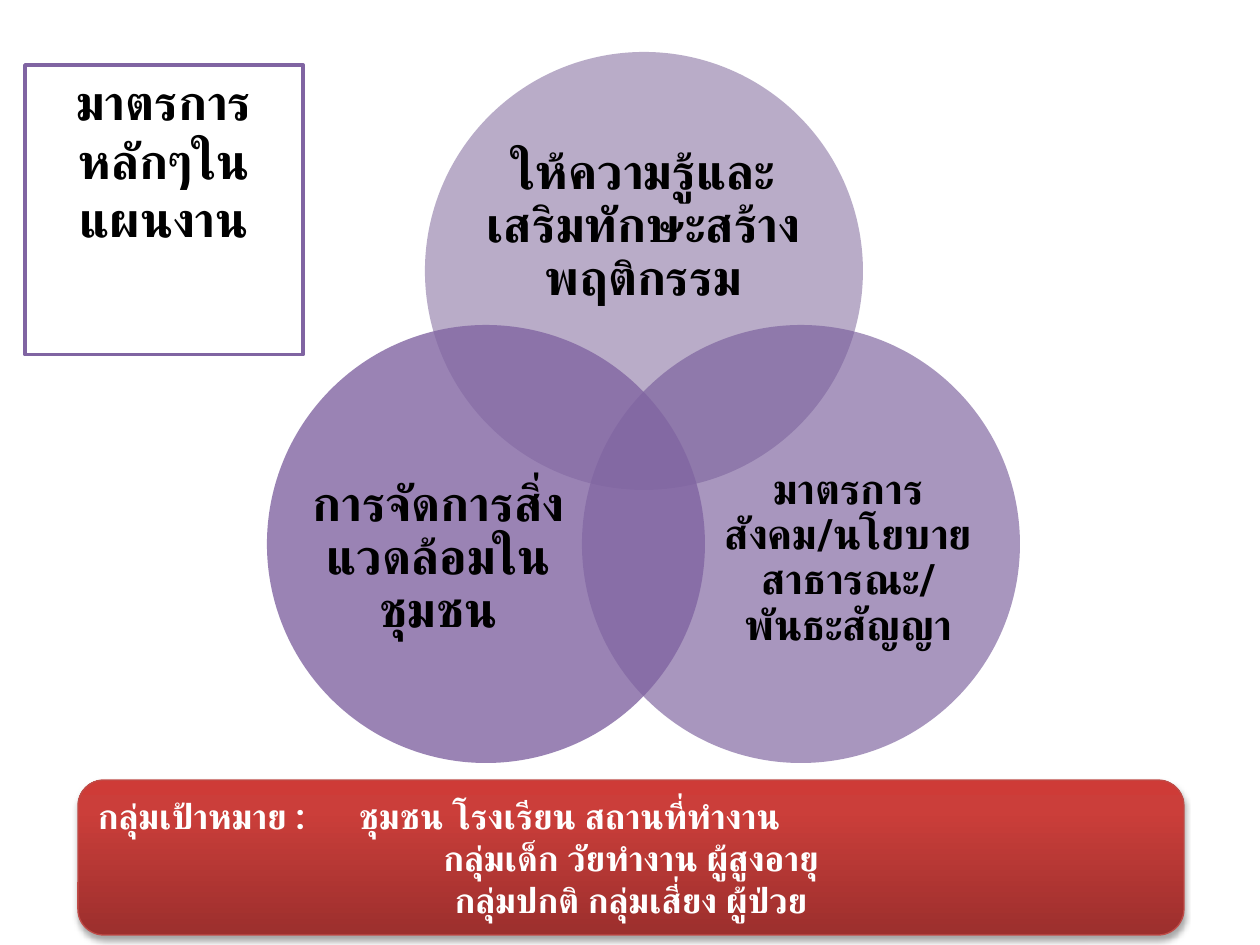
"""Build a slide with three overlapping measures and their target groups."""
from dataclasses import dataclass

from lxml.etree import SubElement
from pptx import Presentation
from pptx.dml.color import RGBColor
from pptx.enum.shapes import MSO_SHAPE
from pptx.enum.text import MSO_ANCHOR, MSO_AUTO_SIZE, PP_ALIGN
from pptx.oxml.ns import qn
from pptx.util import Pt

SCALE = 914400 / 126
SIDE = 438


@dataclass(frozen=True)
class Theme:
    """Colours, font and type sizes."""
    font: str = "Roboto"
    black: str = "000000"
    white: str = "FFFFFF"
    frame: str = "8064A2"
    edge: str = "BF4C48"
    reds: tuple = ((0, "9C2F2D"), (80, "CB3E3A"), (100, "CE3B37"))
    large: int = 28
    mid: int = 24
    small: int = 20


THEME = Theme()

CIRCLES = (
    ((425, 52), "745B93", 50, (483, 129, 321, 196), THEME.large,
     "ให้ความรู้และเสริมทักษะสร้างพฤติกรรม"),
    ((582, 325), "7A5F9C", 65, (717, 438, 263, 241), THEME.mid,
     "มาตรการสังคม/นโยบายสาธารณะ/พันธะสัญญา"),
    ((267, 325), "8165A2", 80, (307, 438, 263, 241), THEME.large,
     "การจัดการสิ่งแวดล้อมในชุมชน"),
)
TARGETS = (
    ("กลุ่มเป้าหมาย :\tชุมชน โรงเรียน สถานที่ทำงาน", PP_ALIGN.LEFT),
    ("กลุ่มเด็ก วัยทำงาน ผู้สูงอายุ", PP_ALIGN.CENTER),
    ("กลุ่มปกติ กลุ่มเสี่ยง ผู้ป่วย", PP_ALIGN.CENTER),
)


def px(*sizes):
    """Turn px lengths into EMU."""
    return [round(size * SCALE) for size in sizes]


def rgb(code):
    """Turn a hex code into a colour."""
    return RGBColor.from_string(code)


def apply(item, values):
    """Set each named value on an item."""
    for name, value in values.items():
        setattr(item, name, value)


def node(parent, tag, **values):
    """Add a drawing element with its values."""
    return SubElement(parent, qn(f"a:{tag}"),
                      {key: str(value) for key, value in values.items()})


def tint(parent, code, alpha=None):
    """Add a colour element, clear in part if asked."""
    color = node(parent, "srgbClr", val=code)
    if alpha is not None:
        node(color, "alpha", val=alpha * 1000)


def write(para, text, size, color, **style):
    """Fill a paragraph with one bold run."""
    apply(para, style)
    run = para.add_run()
    run.text = text
    apply(run.font, {"name": THEME.font, "size": Pt(size), "bold": True})
    run.font.color.rgb = rgb(color)
    node(run.font._element, "cs", typeface=THEME.font)


def outline(shape, color, width):
    """Give a shape its line."""
    shape.line.color.rgb = rgb(color)
    shape.line.width = Pt(width)


def draw_title(slide):
    """Format the title as a framed box."""
    title = slide.shapes.title
    apply(title, dict(zip(("left", "top", "width", "height"),
                          px(25, 65, 278, 191))))
    title.fill.solid()
    title.fill.fore_color.rgb = rgb(THEME.white)
    outline(title, THEME.frame, 2)
    frame = title.text_frame
    apply(frame, {"word_wrap": True, "vertical_anchor": MSO_ANCHOR.TOP,
                  "auto_size": MSO_AUTO_SIZE.SHAPE_TO_FIT_TEXT})
    write(frame.paragraphs[0], "มาตรการหลักๆในแผนงาน", THEME.large,
          THEME.black, alignment=PP_ALIGN.CENTER)


def draw_circle(group, place, color, alpha, area, size, text):
    """Add a clear circle and its label."""
    disc = group.shapes.add_shape(MSO_SHAPE.OVAL, *px(*place, SIDE, SIDE))
    disc.shadow.inherit = False
    disc.fill.solid()
    disc.fill.fore_color.rgb = rgb(color)
    code = disc._element.spPr.find(qn("a:solidFill"))[0]
    node(code, "alpha", val=alpha * 1000)
    disc.line.fill.background()
    frame = group.shapes.add_textbox(*px(*area)).text_frame
    apply(frame, {"word_wrap": True, "vertical_anchor": MSO_ANCHOR.MIDDLE,
                  "margin_left": 0, "margin_top": 0,
                  "margin_right": 0, "margin_bottom": 0})
    write(frame.paragraphs[0], text, size, THEME.black,
          alignment=PP_ALIGN.CENTER, line_spacing=0.9)


def shade(shape, stops):
    """Give a shape an upward gradient."""
    shape.fill.gradient()
    shape.fill.gradient_angle = 90
    steps = shape._element.spPr.find(qn("a:gradFill")).find(qn("a:gsLst"))
    for old in list(steps):
        steps.remove(old)
    for point, code in stops:
        tint(node(steps, "gs", pos=point * 1000), code)


def drop(shape):
    """Give a shape a soft shadow below."""
    shape.shadow.inherit = False
    effects = shape._element.spPr.find(qn("a:effectLst"))
    cast = node(effects, "outerShdw", blurRad=Pt(3.1), dist=Pt(1.8),
                dir=90 * 60000, rotWithShape=0)
    tint(cast, THEME.black, 35)


def draw_banner(slide):
    """Add the red banner of target groups."""
    banner = slide.shapes.add_shape(MSO_SHAPE.ROUNDED_RECTANGLE,
                                    *px(78, 780, 1106, 155))
    shade(banner, THEME.reds)
    outline(banner, THEME.edge, 0.75)
    drop(banner)
    frame = banner.text_frame
    apply(frame, {"word_wrap": True, "vertical_anchor": MSO_ANCHOR.MIDDLE})
    for index, (text, align) in enumerate(TARGETS):
        para = frame.add_paragraph() if index else frame.paragraphs[0]
        write(para, text, THEME.small, THEME.white, alignment=align)
    tabs = node(frame.paragraphs[0]._p.get_or_add_pPr(), "tabLst")
    node(tabs, "tab", pos=px(261)[0], algn="l")


def main():
    """Build and save the slide."""
    deck = Presentation()
    deck.slide_width, deck.slide_height = px(1260, 945)
    slide = deck.slides.add_slide(deck.slide_layouts[5])
    draw_title(slide)
    group = slide.shapes.add_group_shape()
    for circle in CIRCLES:
        draw_circle(group, *circle)
    draw_banner(slide)
    deck.save("out.pptx")


if __name__ == "__main__":
    main()
